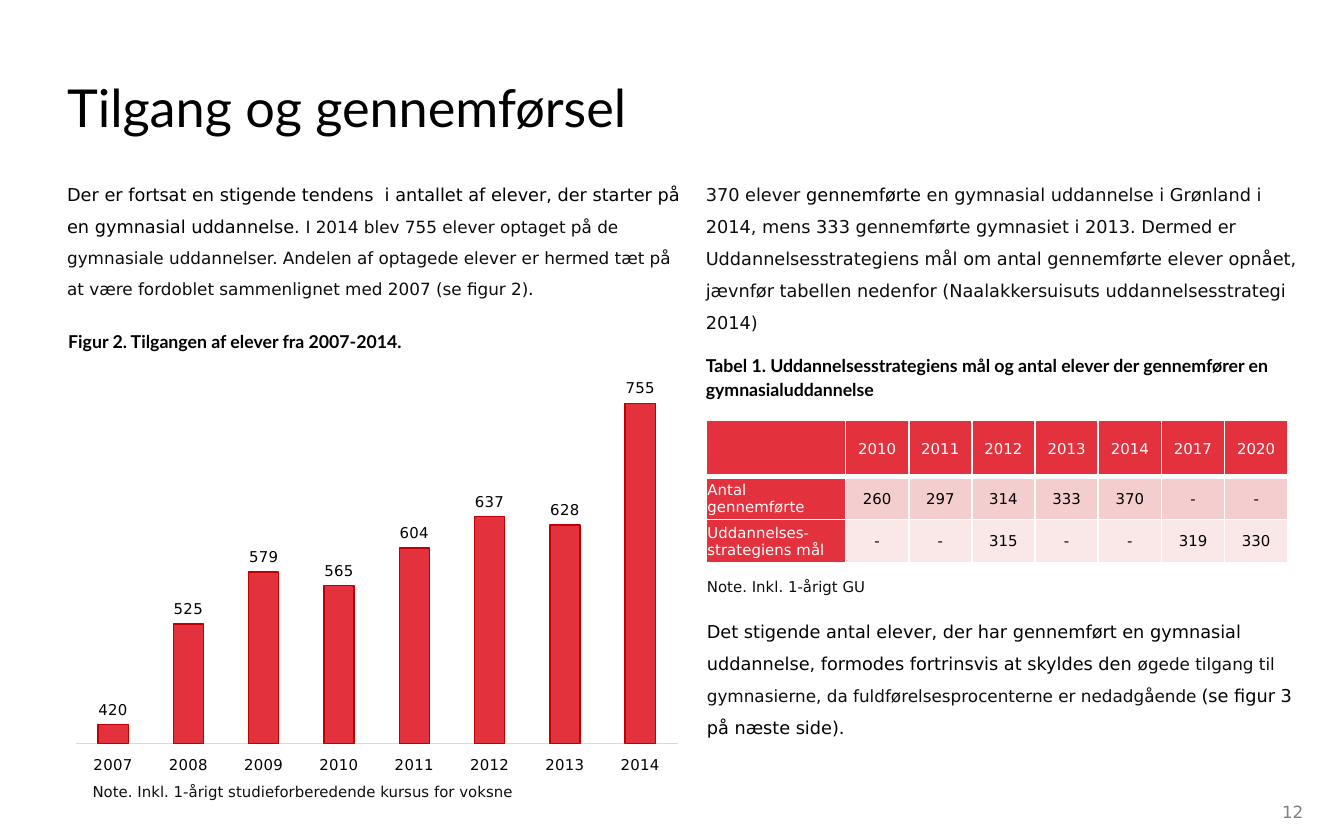
from dataclasses import dataclass

from lxml.etree import SubElement
from pptx import Presentation
from pptx.chart.data import CategoryChartData
from pptx.dml.color import RGBColor
from pptx.enum.chart import XL_CHART_TYPE as ChartType
from pptx.enum.chart import XL_LABEL_POSITION as LabelPosition
from pptx.enum.chart import XL_TICK_LABEL_POSITION as TickLabelPosition
from pptx.enum.chart import XL_TICK_MARK as TickMark
from pptx.enum.text import MSO_ANCHOR as Anchor
from pptx.enum.text import PP_ALIGN as Align
from pptx.oxml.ns import qn
from pptx.slide import Slide
from pptx.table import _Cell as Cell
from pptx.text.text import TextFrame
from pptx.util import Cm, Pt

BLACK = RGBColor(0x00, 0x00, 0x00)
INK = RGBColor(0x0D, 0x0D, 0x0D)
GREY = RGBColor(0x80, 0x80, 0x80)
AXIS_GREY = RGBColor(0xD9, 0xD9, 0xD9)
WHITE = RGBColor(0xFF, 0xFF, 0xFF)
RED = RGBColor(0xE3, 0x32, 0x3D)
DARK_RED = RGBColor(0xC0, 0x00, 0x00)
ROW_FILLS = [RGBColor(0xF4, 0xCE, 0xCE), RGBColor(0xFA, 0xE8, 0xE8)]

BODY_FONT = "DejaVu Sans"
HEADING_FONT = "Lato"


@dataclass(frozen=True)
class Run:
    text: str
    size: float = 9.5
    color: RGBColor = BLACK
    font: str = BODY_FONT
    bold: bool = False


@dataclass(frozen=True)
class TextBlock:
    """A text box; lengths are in centimetres."""
    left: float
    top: float
    width: float
    height: float
    runs: tuple[Run, ...]
    line_spacing: float = 1.5
    anchor: Anchor = Anchor.TOP


TEXT_BLOCKS = [
    TextBlock(1.27, 1.42, 22.86, 1.5,
              (Run("Tilgang og gennemførsel", 28, font=HEADING_FONT),), 1.0),
    TextBlock(1.27, 3.28, 11.81, 2.7, (
        Run("Der er fortsat en stigende tendens  i antallet af elever, der starter på "
            "en gymnasial uddannelse. "),
        Run("I 2014 blev 755 elever optaget på de gymnasiale uddannelser. Andelen af "
            "optagede elever er hermed tæt på at være fordoblet sammenlignet med 2007 "
            "(se figur 2)", 9, INK),
        Run("."))),
    TextBlock(1.29, 6.2, 11.43, 0.46,
              (Run("Figur 2. Tilgangen af elever fra 2007-2014.",
                   font=HEADING_FONT, bold=True),), 1.14),
    TextBlock(1.75, 14.63, 11.2, 0.69,
              (Run("Note. Inkl. 1-årigt studieforberedende kursus for voksne", 8, INK),)),
    TextBlock(13.34, 3.28, 11.43, 3.2, (
        Run("370 elever ", color=INK),
        Run("gennemførte "),
        Run("en gymnasial uddannelse i Grønland i 2014, mens 333 gennemførte gymnasiet "
            "i 2013. Dermed er Uddannelsesstrategiens mål om antal gennemførte elever "
            "opnået, jævnfør tabellen nedenfor (Naalakkersuisuts uddannelsesstrategi "
            "2014)", color=INK))),
    TextBlock(13.34, 6.65, 11, 0.89,
              (Run("Tabel 1. Uddannelsesstrategiens mål og antal elever der gennemfører "
                   "en gymnasialuddannelse", font=HEADING_FONT, bold=True),), 1.14),
    TextBlock(13.36, 10.74, 11.2, 0.6, (Run("Note. Inkl. 1-årigt GU", 8, INK),)),
    TextBlock(13.36, 11.53, 11.43, 2.72, (
        Run("Det stigende antal elever, der har gennemført en gymnasial uddannelse, "
            "formodes fortrinsvis at skyldes den "),
        Run("øgede tilgang til gymnasierne, da fuldførelsesprocenterne er nedadgående ",
            9, INK),
        Run("(se figur 3 på næste side)."))),
    TextBlock(24.23, 15.19, 0.54, 0.23, (Run("12", 9, GREY),), 1.2, Anchor.MIDDLE),
]

INTAKE = {"2007": 420, "2008": 525, "2009": 579, "2010": 565,
          "2011": 604, "2012": 637, "2013": 628, "2014": 755}

TABLE_ROWS = [
    ["", "2010", "2011", "2012", "2013", "2014", "2017", "2020"],
    ["Antal gennemførte", "260", "297", "314", "333", "370", "-", "-"],
    ["Uddannelses-strategiens mål", "-", "-", "315", "-", "-", "319", "330"],
]


def write_text(frame: TextFrame, runs: tuple[Run, ...], *, line_spacing: float = 1.0,
               align: Align = Align.LEFT) -> None:
    paragraph = frame.paragraphs[0]
    paragraph.alignment = align
    paragraph.line_spacing = line_spacing
    paragraph.font.size = Pt(runs[0].size)
    for part in runs:
        if not part.text:
            continue
        run = paragraph.add_run()
        run.text = part.text
        run.font.size = Pt(part.size)
        run.font.name = part.font
        run.font.bold = part.bold
        run.font.color.rgb = part.color


def add_text_block(slide: Slide, block: TextBlock) -> None:
    shape = slide.shapes.add_textbox(Cm(block.left), Cm(block.top),
                                     Cm(block.width), Cm(block.height))
    frame = shape.text_frame
    frame.word_wrap = True
    frame.vertical_anchor = block.anchor
    frame.margin_left = frame.margin_right = frame.margin_top = frame.margin_bottom = 0
    write_text(frame, block.runs, line_spacing=block.line_spacing)


def add_intake_chart(slide: Slide) -> None:
    data = CategoryChartData(number_format="0")
    data.categories = list(INTAKE)
    data.add_series("Tilgang", list(INTAKE.values()))
    chart = slide.shapes.add_chart(ChartType.COLUMN_CLUSTERED, Cm(1.19), Cm(6.65),
                                   Cm(11.86), Cm(8), data).chart
    chart.has_legend = False
    chart.has_title = False
    chart.font.size = Pt(8)
    chart.font.name = BODY_FONT
    chart.font.color.rgb = BLACK

    value_axis = chart.value_axis
    value_axis.minimum_scale = 400
    value_axis.maximum_scale = 800
    value_axis.major_unit = 200
    value_axis.has_major_gridlines = False
    value_axis.visible = False
    category_axis = chart.category_axis
    category_axis.major_tick_mark = TickMark.NONE
    category_axis.tick_label_position = TickLabelPosition.LOW
    category_axis.format.line.color.rgb = AXIS_GREY
    category_axis.format.line.width = Pt(0.75)

    plot = chart.plots[0]
    plot.gap_width = 150
    plot.vary_by_categories = False
    plot.has_data_labels = True
    labels = plot.data_labels
    labels.show_value = True
    labels.position = LabelPosition.OUTSIDE_END
    labels.number_format = "0"
    labels.number_format_is_linked = False
    columns = plot.series[0].format
    columns.fill.solid()
    columns.fill.fore_color.rgb = RED
    columns.line.color.rgb = DARK_RED
    columns.line.width = Pt(0.75)
    set_plot_layout(chart, x=0.02, y=0.02, w=0.96, h=0.91)


def set_plot_layout(chart, **fractions: float) -> None:
    """Fix the inner plot area as fractions of the chart's size."""
    plot_area = chart.plots[0]._element.getparent()
    layout = plot_area.find(qn("c:layout"))
    if layout is None:
        layout = plot_area.makeelement(qn("c:layout"))
        plot_area.insert(0, layout)
    manual = SubElement(layout, qn("c:manualLayout"))
    settings = {"layoutTarget": "inner", "xMode": "edge", "yMode": "edge", **fractions}
    for name, value in settings.items():
        SubElement(manual, qn(f"c:{name}"), val=str(value))


def format_cell(cell: Cell, fill: RGBColor, top: float, bottom: float) -> None:
    """Fill the cell and give it white borders, with widths in points."""
    properties = cell._tc.get_or_add_tcPr()
    for side, width in {"L": 1, "R": 1, "T": top, "B": bottom}.items():
        line = SubElement(properties, qn(f"a:ln{side}"), w=str(Pt(width)))
        SubElement(SubElement(line, qn("a:solidFill")), qn("a:srgbClr"), val=str(WHITE))
    cell.fill.solid()
    cell.fill.fore_color.rgb = fill
    cell.vertical_anchor = Anchor.MIDDLE
    cell.margin_left = cell.margin_right = cell.margin_top = Cm(0.03)
    cell.margin_bottom = 0


def add_goal_table(slide: Slide) -> None:
    table = slide.shapes.add_table(len(TABLE_ROWS), len(TABLE_ROWS[0]), Cm(13.34),
                                   Cm(7.94), Cm(11), Cm(2.69)).table
    for index, column in enumerate(table.columns):
        column.width = Cm(1.194 if index else 2.64)
    for row_index, texts in enumerate(TABLE_ROWS):
        table.rows[row_index].height = Cm(0.81 if row_index else 1.07)
        for column_index, text in enumerate(texts):
            is_heading = row_index == 0 or column_index == 0
            cell = table.cell(row_index, column_index)
            format_cell(cell, RED if is_heading else ROW_FILLS[row_index - 1],
                        top=3 if row_index == 1 else 1, bottom=1 if row_index else 3)
            write_text(cell.text_frame, (Run(text, 8, WHITE if is_heading else BLACK),),
                       align=Align.CENTER if column_index else Align.LEFT)


def main() -> None:
    presentation = Presentation()
    presentation.slide_width = Cm(25.4)
    presentation.slide_height = Cm(15.875)
    slide = presentation.slides.add_slide(presentation.slide_layouts[6])
    add_intake_chart(slide)
    add_goal_table(slide)
    for block in TEXT_BLOCKS:
        add_text_block(slide, block)
    presentation.save("out.pptx")


if __name__ == "__main__":
    main()
